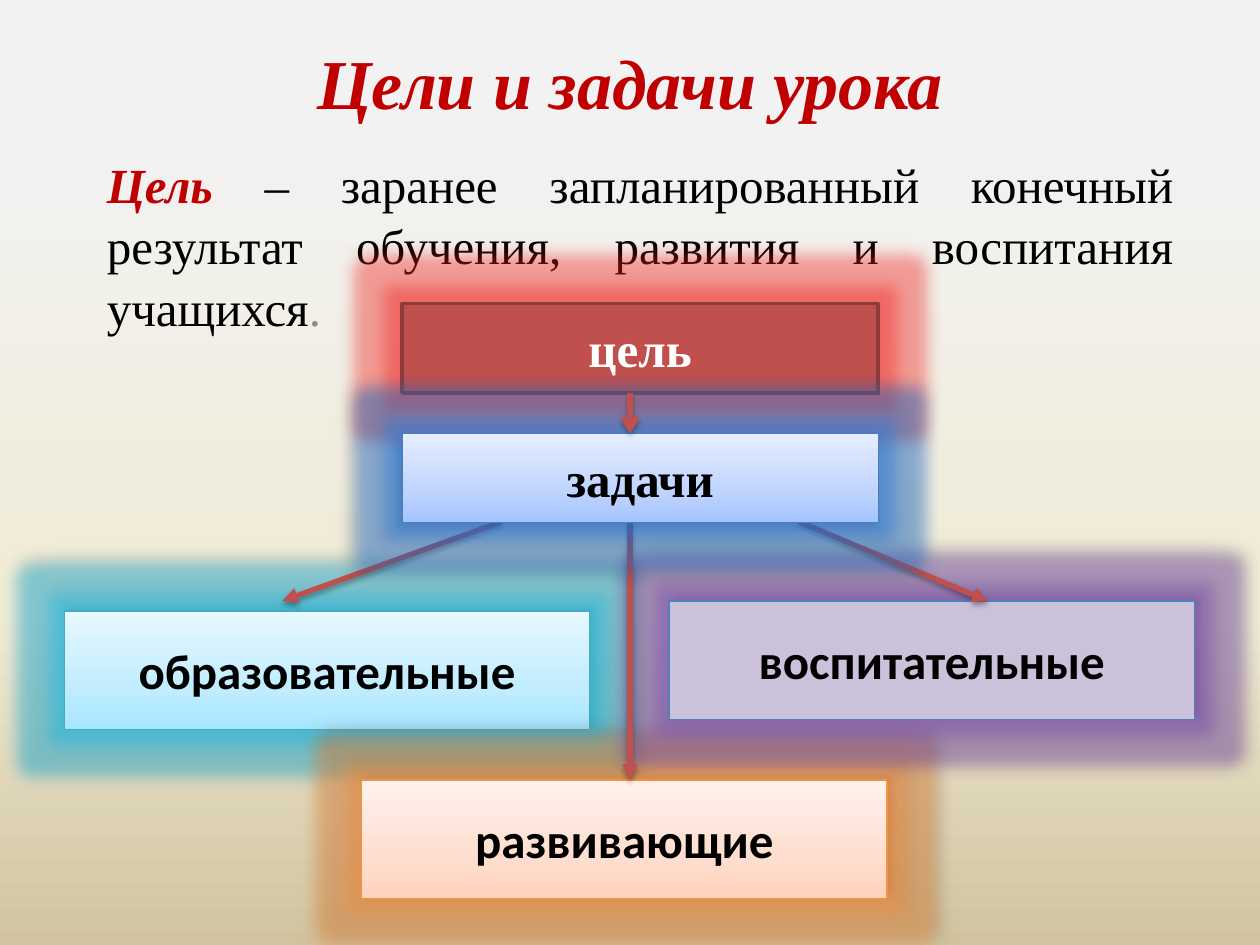
import pptx
import pptx.util
import pptx.dml.color
import pptx.enum.shapes
import pptx.enum.text
import pptx.oxml.ns
import lxml.etree
from pptx.util import Inches

SERIF, SANS = "Times New Roman", "Calibri"
COLORS = {
    "accent": "C00000", "black": "000000", "white": "FFFFFF", "grey": "8C8C8C",
    "goal": "C0504D", "goal_line": "8E3B39", "goal_glow": "F01B19",
    "tasks_line": "4B7EBC", "tasks_glow": "267BE6",
    "teach_line": "46AAC5", "teach_glow": "1CC5F4",
    "grow_line": "F69240", "grow_glow": "FF9542",
    "raise": "CCC1DA", "raise_line": "4F81BD", "raise_glow": "7D4DBA",
}
GRADIENTS = {
    "background": [(15, "F2F2F2"), (65, "F0EBD5"), (100, "D1C39F")],
    "tasks": [(0, "A4C4FF"), (35, "BFD4FF"), (100, "E6EEFF")],
    "teach": [(0, "A7E6FF"), (35, "C1EDFF"), (100, "E7F8FF")],
    "grow": [(0, "FFD2BD"), (35, "FFDED0"), (100, "FFF2ED")],
}


def rgb(name):
    return pptx.dml.color.RGBColor.from_string(COLORS[name])


def add_xml(parent, tag, **attributes):
    child = lxml.etree.SubElement(parent, pptx.oxml.ns.qn(tag))
    for key, value in attributes.items():
        child.set(key, str(value))
    return child


def add_color(parent, value, alpha=100):
    color = add_xml(parent, "a:srgbClr", val=value)
    if alpha < 100:
        add_xml(color, "a:alpha", val=alpha * 1000)


def set_gradient(fill, owner, stops, angle):
    fill.gradient()
    gradient = next(owner.iter(pptx.oxml.ns.qn("a:gradFill")))
    for child in list(gradient):
        gradient.remove(child)
    stop_list = add_xml(gradient, "a:gsLst")
    for position, value in stops:
        add_color(add_xml(stop_list, "a:gs", pos=position * 1000), value)
    add_xml(gradient, "a:lin", ang=angle * 60000, scaled=0)


def add_effects(properties, glow=None, shadow=None):
    """Glow is a colour name; shadow is alpha, blur, distance, angle."""
    for old in properties.findall(pptx.oxml.ns.qn("a:effectLst")):
        properties.remove(old)
    effects = add_xml(properties, "a:effectLst")
    if glow:
        add_color(add_xml(effects, "a:glow", rad=Inches(0.25)), COLORS[glow], 40)
    if shadow:
        alpha, blur, distance, angle = shadow
        outer = add_xml(effects, "a:outerShdw", blurRad=int(blur * 12700),
                        dist=int(distance * 12700), dir=angle * 60000, rotWithShape=0)
        add_color(outer, COLORS["black"], alpha)


def add_run(paragraph, text, size, font, color, bold=False, italic=False):
    run = paragraph.add_run()
    run.text = text
    run.font.size = pptx.util.Pt(size)
    run.font.name = font
    run.font.bold, run.font.italic = bold, italic
    run.font.color.rgb = rgb(color)


def add_text(slide, left, top, width, height, align, anchor):
    box = slide.shapes.add_textbox(Inches(left), Inches(top), Inches(width), Inches(height))
    box.text_frame.word_wrap = True
    box.text_frame.vertical_anchor = anchor
    paragraph = box.text_frame.paragraphs[0]
    paragraph.alignment = align
    return paragraph


def add_block(slide, text, left, top, size, part, font, color="black",
              line_width=0.75, shadow_angle=315):
    block = slide.shapes.add_shape(
        pptx.enum.shapes.MSO_SHAPE.RECTANGLE, Inches(left), Inches(top),
        Inches(size[0]), Inches(size[1]))
    if part in GRADIENTS:
        set_gradient(block.fill, block._element.spPr, GRADIENTS[part], 270)
    else:
        block.fill.solid()
        block.fill.fore_color.rgb = rgb(part)
    block.line.color.rgb = rgb(part + "_line")
    block.line.width = pptx.util.Pt(line_width)
    shadow = (40, 4, 3, shadow_angle) if shadow_angle is not None else None
    add_effects(block._element.spPr, part + "_glow", shadow)
    frame = block.text_frame
    frame.word_wrap = False
    frame.vertical_anchor = pptx.enum.text.MSO_ANCHOR.MIDDLE
    frame.paragraphs[0].alignment = pptx.enum.text.PP_ALIGN.CENTER
    add_run(frame.paragraphs[0], text, 28, font, color, bold=True)


def add_arrow(slide, start, end, head="triangle"):
    arrow = slide.shapes.add_connector(
        pptx.enum.shapes.MSO_CONNECTOR.STRAIGHT, *map(Inches, start + end))
    arrow.line.color.rgb = rgb("goal")
    arrow.line.width = pptx.util.Pt(3)
    add_xml(arrow.line._get_or_add_ln(), "a:tailEnd", type=head)
    add_effects(arrow._element.spPr, shadow=(35, 3.1, 1.8, 90))


def main():
    deck = pptx.Presentation()
    deck.slide_width, deck.slide_height = Inches(10), Inches(7.5)
    slide = deck.slides.add_slide(deck.slide_layouts[6])
    set_gradient(slide.background.fill, slide._element, GRADIENTS["background"], 90)
    align, anchor = pptx.enum.text.PP_ALIGN, pptx.enum.text.MSO_ANCHOR

    # Title and definition
    title = add_text(slide, 0.75, 0.21, 8.5, 0.87, align.CENTER, anchor.MIDDLE)
    add_run(title, "Цели и задачи урока", 40, SERIF, "accent", True, True)
    definition = add_text(slide, 0.75, 1.15, 8.66, 1.89, align.JUSTIFY, anchor.TOP)
    definition.line_spacing = 1.05
    add_run(definition, "Цель", 28, SERIF, "accent", True, True)
    add_run(definition, " – заранее запланированный конечный результат обучения, "
            "развития и воспитания учащихся", 28, SERIF, "black")
    add_run(definition, ".", 28, SERIF, "grey")

    # Goal and the three kinds of tasks
    main_size, kind_size = (3.78, 0.71), (4.17, 0.94)
    add_block(slide, "цель", 3.19, 2.41, main_size, "goal", SERIF, "white", 2, None)
    add_block(slide, "образовательные", 0.51, 4.85, kind_size, "teach", SANS)
    add_block(slide, "развивающие", 2.87, 6.19, kind_size, "grow", SANS)
    add_block(slide, "воспитательные", 5.31, 4.77, kind_size, "raise", SANS)

    # Arrows from the tasks to their kinds, partly under the tasks glow
    for start_x, end in ((5, (5, 6.19)), (3.98, (2.24, 4.77)), (6.34, (7.84, 4.77))):
        add_arrow(slide, (start_x, 4.14), end)

    # Tasks block and the arrow leading to it
    add_block(slide, "задачи", 3.19, 3.44, main_size, "tasks", SERIF, shadow_angle=135)
    add_arrow(slide, (5, 3.12), (5, 3.44), "arrow")

    deck.save("out.pptx")


if __name__ == "__main__":
    main()
